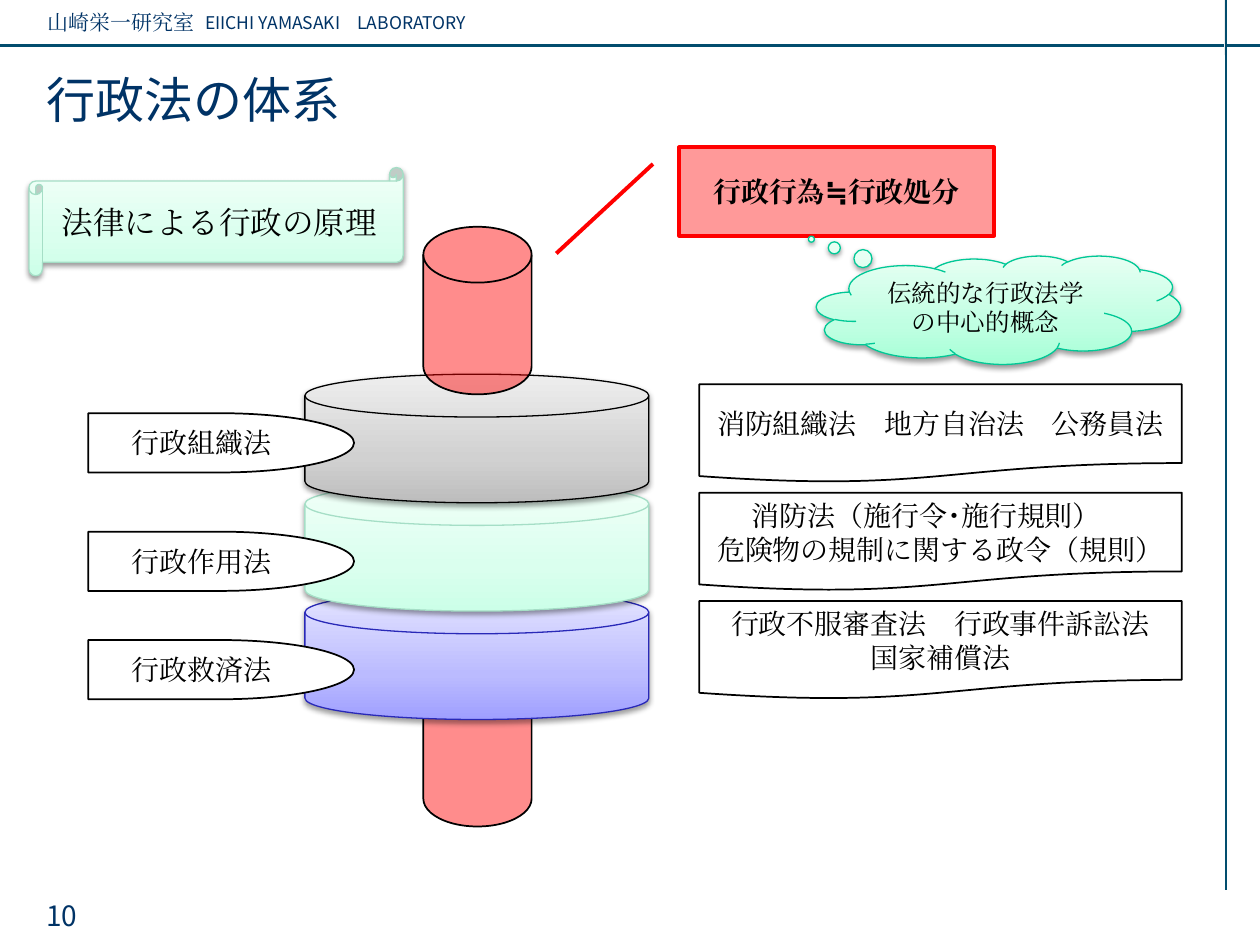
from collections import namedtuple

from lxml import etree
from pptx import Presentation
from pptx.dml.color import RGBColor
from pptx.enum.shapes import MSO_CONNECTOR, MSO_SHAPE
from pptx.enum.text import MSO_ANCHOR, PP_ALIGN
from pptx.oxml.ns import qn
from pptx.util import Inches, Pt

LEFT, CENTER = PP_ALIGN.LEFT, PP_ALIGN.CENTER
TOP, MIDDLE = MSO_ANCHOR.TOP, MSO_ANCHOR.MIDDLE
DISK = MSO_SHAPE.FLOWCHART_MAGNETIC_DISK
DOCUMENT = MSO_SHAPE.FLOWCHART_DOCUMENT
DELAY = MSO_SHAPE.FLOWCHART_DELAY
SCROLL = MSO_SHAPE.HORIZONTAL_SCROLL
CLOUD = MSO_SHAPE.CLOUD_CALLOUT
LINE_CALLOUT = MSO_SHAPE.LINE_CALLOUT_1
STRAIGHT = MSO_CONNECTOR.STRAIGHT

SERIF, SANS = "Times New Roman", "Noto Sans CJK JP"
NAVY, TEAL, BLACK, WHITE, RED = "003366", "024D6E", "000000", "FFFFFF", "FF0000"
MINT = ("CCFFE8", "DAFFEE", "F1FFF8")
MINT_LINE = "A5DEC6"
GRAY = ("BDBDBD", "D1D1D1", "EEEEEE")
BLUE = ("9F9FFF", "BBBBFF", "E5E5FF")
CLOUD_GREEN = ("A5FFD6", "BFFFE2", "E7FFF3")
LAYER_STEP = 0.86

Box = namedtuple("Box", "left top width height")


def color(value):
    return RGBColor.from_string(value)


def add_xml(parent, tag, **attributes):
    return etree.SubElement(parent, qn(tag), attributes)


def place(part, box):
    part.left, part.top, part.width, part.height = map(Inches, box)


def write(part, text, size=16, font=SERIF, ink=BLACK, bold=False,
          align=CENTER, anchor=MIDDLE):
    frame = part.text_frame
    frame.text = text
    frame.word_wrap = True
    frame.vertical_anchor = anchor
    for paragraph in frame.paragraphs:
        paragraph.alignment = align
        paragraph.space_before = Pt(0)
        for run in paragraph.runs:
            run.font.size, run.font.name, run.font.bold = Pt(size), font, bold
            run.font.color.rgb = color(ink)
            add_xml(run.font._element, "a:ea", typeface=font)


def label(slide, box, text, **style):
    part = slide.shapes.add_textbox(*map(Inches, box))
    write(part, text, align=LEFT, anchor=TOP, **style)


def rule(slide, start, end, ink, weight):
    line = slide.shapes.add_connector(STRAIGHT, *map(Inches, start + end))
    line.line.color.rgb = color(ink)
    line.line.width = Pt(weight)
    add_xml(line._element.spPr, "a:effectLst")


def shape(slide, kind, box, fill, line=BLACK, weight=1, opacity=100, adjust=()):
    """A hex fill gives a flat shape, three hex stops a shaded one with a shadow."""
    part = slide.shapes.add_shape(kind, *map(Inches, box))
    for index, value in enumerate(adjust):
        part.adjustments[index] = value
    part.shadow.inherit = False
    part.line.color.rgb = color(line)
    part.line.width = Pt(weight)
    part.fill.solid()
    part.fill.fore_color.rgb = color(fill if isinstance(fill, str) else fill[0])
    properties = part._element.spPr
    solid = properties.find(qn("a:solidFill"))
    if isinstance(fill, str):
        if opacity < 100:
            add_xml(solid[0], "a:alpha", val=str(opacity * 1000))
        return part
    gradient = etree.Element(qn("a:gradFill"), rotWithShape="1")
    stops = add_xml(gradient, "a:gsLst")
    for position, stop in zip((0, 35, 100), fill):
        add_xml(add_xml(stops, "a:gs", pos=str(position * 1000)),
                "a:srgbClr", val=stop)
    add_xml(gradient, "a:lin", ang="16200000", scaled="0")
    properties.replace(solid, gradient)
    shadow = add_xml(properties.find(qn("a:effectLst")), "a:outerShdw",
                     blurRad=str(Pt(3.1)), dist=str(Pt(1.6)), dir="5400000",
                     rotWithShape="0")
    add_xml(add_xml(shadow, "a:srgbClr", val=BLACK), "a:alpha", val="38000")
    return part


def page_frame(slide, box):
    right, bottom = box.left + box.width, box.top + box.height
    label(slide, Box(box.left + 0.28, box.top + 0.03, 3.07, 0.3),
          "山崎栄一研究室", size=12, ink=NAVY)
    rule(slide, (box.left, box.top + 0.36), (right, box.top + 0.36), TEAL, 1.5)
    label(slide, Box(box.left + 1.53, box.top + 0.05, 5.67, 0.27),
          "EIICHI YAMASAKI　LABORATORY", size=10, font=SANS, ink=NAVY)
    rule(slide, (right - 0.28, box.top + 0.44), (right - 0.28, box.top), "EEEEEE", 0.75)
    rule(slide, (right - 0.27, box.top), (right - 0.27, bottom - 0.44), TEAL, 0.75)
    label(slide, Box(box.left + 0.27, bottom - 0.42, 2.08, 0.5), "10",
          font=SANS, ink=NAVY)


def pillar(slide, box):
    """Three layers, lowest first, on a red shaft."""
    shaft_left, shaft_height = box.left + 0.94, 1.33
    shaft_tops = (box.top + box.height - shaft_height, box.top)

    def shaft(top):
        shape(slide, DISK, Box(shaft_left, top, 0.86, shaft_height), RED, opacity=45)

    shaft(shaft_tops[0])
    layers = ((2, BLUE, "2929B8"), (1, MINT, MINT_LINE), (0, GRAY, BLACK))
    for level, fill, line in layers:
        top = box.top + 1.17 + level * LAYER_STEP
        shape(slide, DISK, Box(box.left, top, box.width, 1.02), fill, line, 0.75)
    shaft(shaft_tops[1])


def administrative_act(slide, box):
    act = shape(slide, LINE_CALLOUT, Box(box.left, box.top, 2.5, 0.7), "FF9999",
                RED, 2.25, adjust=(0.188, -0.083, 1.203, -0.39))
    write(act, "行政行為≒行政処分", bold=True)
    concept = shape(slide, CLOUD,
                    Box(box.left + 1.09, box.top + 0.86, box.width - 1.09, 0.86),
                    CLOUD_GREEN, "00C896", 0.75, adjust=(-0.514, -0.653))
    write(concept, "伝統的な行政法学の中心的概念", size=14)


def statutes(slide, box):
    laws = ("消防組織法　地方自治法　公務員法",
            "消防法（施行令･施行規則）　\n危険物の規制に関する政令（規則）",
            "行政不服審査法　行政事件訴訟法\n国家補償法")
    for row, text in enumerate(laws):
        top = box.top + row * LAYER_STEP
        write(shape(slide, DOCUMENT, Box(box.left, top, box.width, 0.78), WHITE), text)


def layer_names(slide, box):
    names = ((0, "行政組織法"), (0.94, "行政作用法"), (1.8, "行政救済法"))
    for offset, name in names:
        tag = Box(box.left, box.top + offset, box.width, 0.47)
        write(shape(slide, DELAY, tag, WHITE), name)


def principle(slide, box):
    write(shape(slide, SCROLL, box, MINT, MINT_LINE, 0.75),
          "法律による行政の原理", size=18)


def main():
    deck = Presentation()
    deck.slide_width, deck.slide_height = Inches(10), Inches(7.5)
    slide = deck.slides.add_slide(deck.slide_layouts[5])

    # Running header, rules and page number
    page_frame(slide, Box(0, 0, 10, 7.5))

    # Title
    title = slide.shapes.title
    place(title, Box(0.27, 0.5, 9.21, 0.57))
    write(title, "行政法の体系", size=28, font=SANS, ink=NAVY, align=LEFT)

    # Diagram
    pillar(slide, Box(2.42, 1.8, 2.73, 4.76))
    administrative_act(slide, Box(5.39, 1.17, 3.98, 1.72))
    statutes(slide, Box(5.55, 3.05, 3.83, 2.5))
    layer_names(slide, Box(0.7, 3.28, 2.11, 2.27))
    principle(slide, Box(0.23, 1.33, 2.97, 0.86))

    deck.save("out.pptx")


if __name__ == "__main__":
    main()
